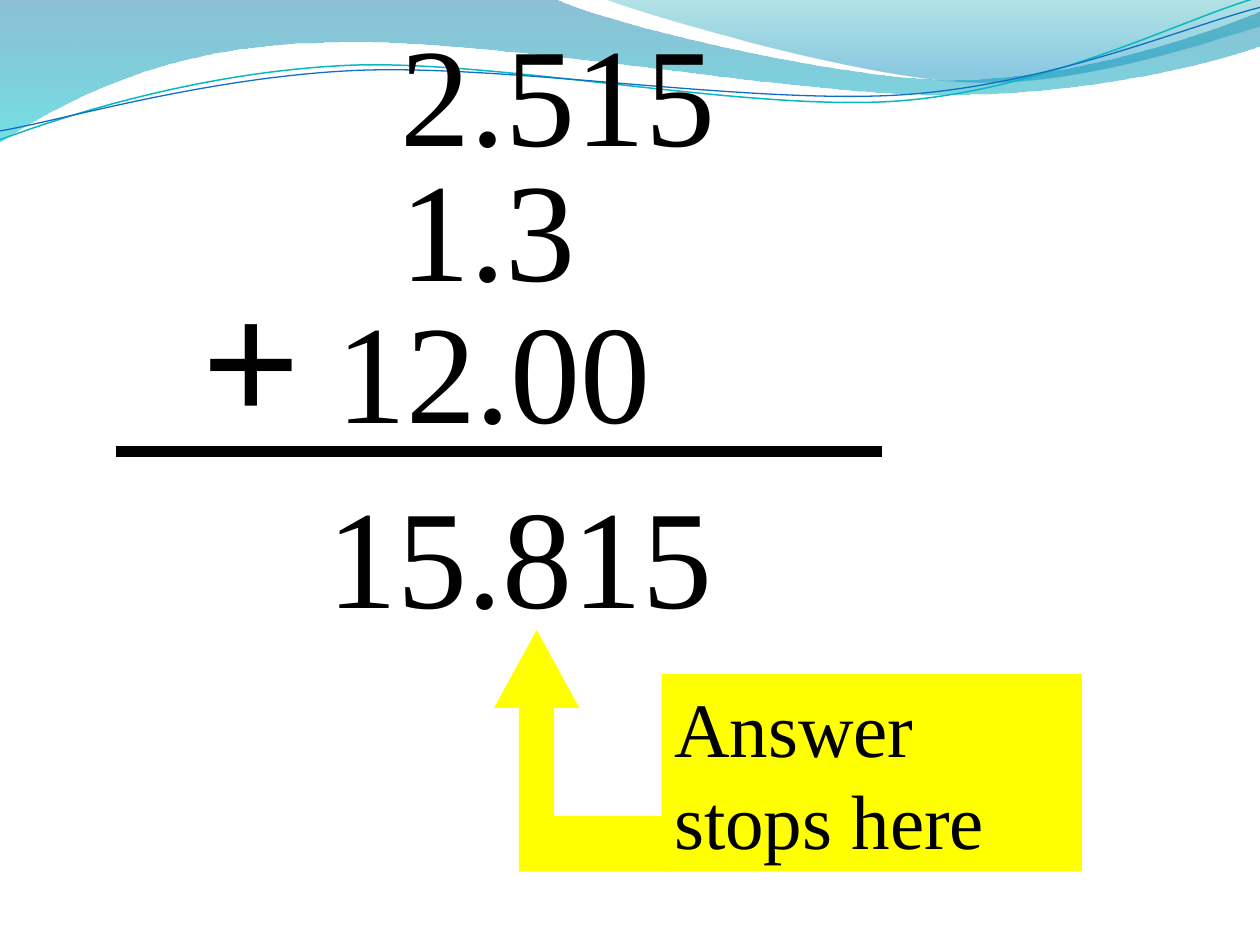
from lxml import etree
from pptx import Presentation, util as u
from pptx.dml.color import RGBColor
from pptx.enum import shapes, text
from pptx.oxml.ns import qn

BLACK, YELLOW = "000000", "FFFF00"

color = RGBColor.from_string


def add_outline(start, segments, closed=True):
    """Draw a path in cm; a segment is a line (x, y) or a Bezier curve of six numbers."""
    points = [(u.Cm(s[i]), u.Cm(s[i + 1])) for s in segments for i in range(0, len(s), 2)]
    builder = slide.shapes.build_freeform(u.Cm(start[0]), u.Cm(start[1]))
    builder.add_line_segments(points, close=closed)
    outline = builder.convert_to_shape()
    outline.shadow.inherit = False
    steps = iter(list(outline._element.iter(qn("a:lnTo"))))
    for segment in segments:
        step = next(steps)
        if len(segment) == 6:
            curve = etree.Element(qn("a:cubicBezTo"))
            step.addprevious(curve)
            for control in (step, next(steps), next(steps)):
                curve.append(control[0])
                control.getparent().remove(control)
    return outline


def write_text(shape, size, runs):
    """Fill a shape with one left-aligned paragraph of (words, size, bold) runs."""
    frame = shape.text_frame
    frame.word_wrap = True
    frame.auto_size = text.MSO_AUTO_SIZE.SHAPE_TO_FIT_TEXT
    frame.vertical_anchor = text.MSO_ANCHOR.TOP
    paragraph = frame.paragraphs[0]
    paragraph.alignment = text.PP_ALIGN.LEFT
    paragraph.space_before = u.Pt(size * 0.1)
    for words, run_size, bold in runs:
        run = paragraph.add_run()
        run.text = words
        run.font.size = u.Pt(run_size)
        run.font.bold = bold
        run.font.name = "Times New Roman"
        run.font.color.rgb = color(BLACK)


prs = Presentation()
prs.slide_width, prs.slide_height = u.Cm(25.4), u.Cm(19.05)
slide = prs.slides.add_slide(prs.slide_layouts[6])

# Translucent waves: start, segments, gradient stops (position, colour, opacity %)
waves = [
    ((0, -0.03),
     [(11.18, -0.03),
      (12.09, 0.43, 16.87, 1.6, 19.25, 1.6),
      (21.67, 1.6, 24.33, 0.66, 25.4, 0.23),
      (25.43, 0.91),
      (24.97, 1.12, 22.1, 1.93, 18.95, 1.91),
      (15.8, 1.91, 9.7, 0.71, 6.53, 0.86),
      (3.28, 0.89, 1.17, 2.11, -0.03, 2.87)],
     [(0, "0074A1", 45), (1, "00C6CF", 55)]),
    ((12.17, -0.03),
     [(12.93, 0.28, 17.32, 1.57, 19.53, 1.65),
      (21.74, 1.75, 24.41, 0.81, 25.4, 0.53),
      (25.4, 0)],
     [(0, "00A1A9", 30), (0.8, "008BBF", 45)]),
]
for start, segments, stops in waves:
    wave = add_outline(start, segments)
    wave.line.fill.background()
    wave.fill.gradient()
    wave.fill.gradient_angle = 270
    for stop, (position, shade, _) in zip(wave.fill.gradient_stops, stops):
        stop.position = position
        stop.color.rgb = color(shade)
    for tint, (_, _, opacity) in zip(wave._element.spPr.iter(qn("a:srgbClr")), stops):
        etree.SubElement(tint, qn("a:alpha"), val=str(opacity * 1000))

# Thin ripples over the waves, tilted slightly
ripples = [
    ((-0.05, 2.22),
     [(1.19, 1.82, 4.02, 1.04, 7.05, 1.05),
      (10.05, 1.07, 15.02, 2.37, 18.08, 2.29),
      (21.13, 2.2, 23.87, 0.91, 25.41, 0.55)],
     "0AB8BF", 0.85),
    ((-0.04, 2.04),
     [(1.16, 1.9, 4.18, 1.15, 7.2, 1.16),
      (10.25, 1.18, 15.13, 2.23, 18.18, 2.17),
      (21.21, 2.1, 23.93, 1.06, 25.45, 0.75)],
     "0F6FC6", 0.75),
]
for start, segments, shade, width in ripples:
    ripple = add_outline(start, segments, closed=False)
    ripple.rotation = 357.3
    ripple.fill.background()
    ripple.line.color.rgb = color(shade)
    ripple.line.width = u.Pt(width)

# Addends and sum: left, top, height, largest size, runs
numbers = [
    (7.82, 0, 3.63, 80, [("2.515", 80, False)]),
    (7.82, 2.72, 3.63, 80, [("1.3", 80, False)]),
    (3.81, 4.88, 4.5, 100, [("+", 100, True), (" 12.00", 80, False)]),
    (6.35, 9.32, 3.63, 80, [("15.815", 80, False)]),
]
for left, top, height, size, runs in numbers:
    number = slide.shapes.add_textbox(u.Cm(left), u.Cm(top), u.Cm(11.63), u.Cm(height))
    write_text(number, size, runs)

sum_line = slide.shapes.add_connector(
    shapes.MSO_CONNECTOR.STRAIGHT, u.Cm(2.33), u.Cm(9.1), u.Cm(17.78), u.Cm(9.1))
sum_line.line.color.rgb = color(BLACK)
sum_line.line.width = u.Pt(6)
etree.SubElement(sum_line._element.spPr, qn("a:effectLst"))

# Bent arrow from the note up to the sum
arrow = add_outline((10.82, 12.7), [
    (11.68, 14.27), (11.17, 14.27), (11.17, 16.45), (13.55, 16.45),
    (13.55, 17.57), (10.46, 17.57), (10.46, 14.27), (9.96, 14.27)])
note = slide.shapes.add_shape(
    shapes.MSO_SHAPE.RECTANGLE, u.Cm(13.34), u.Cm(13.59), u.Cm(8.47), u.Cm(3.98))
note.shadow.inherit = False
for part in (arrow, note):
    part.fill.solid()
    part.fill.fore_color.rgb = color(YELLOW)
    part.line.fill.background()
write_text(note, 44, [("Answer stops here", 44, False)])

prs.save("out.pptx")
